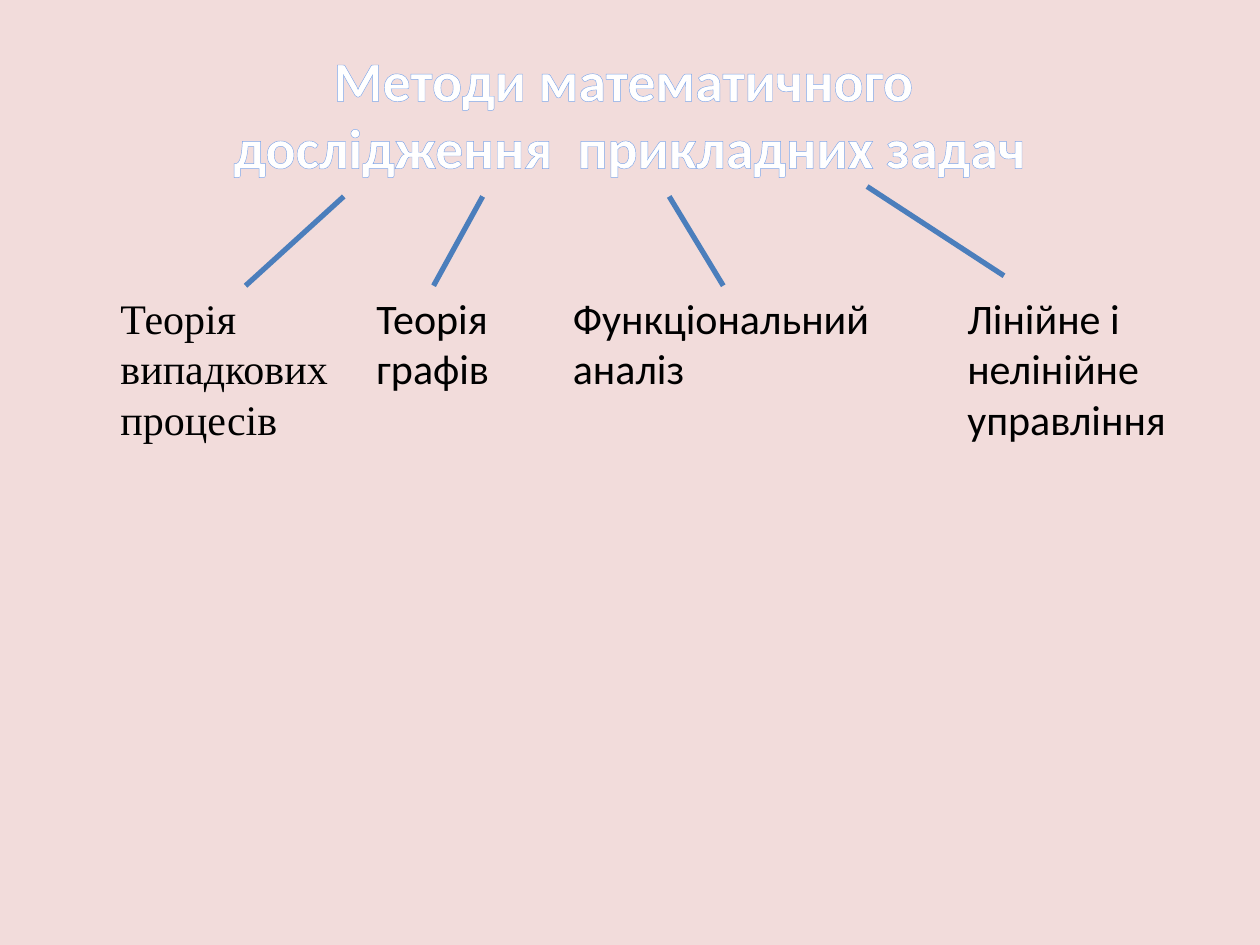
import pptx
import pptx.dml.color
import pptx.enum.shapes
import pptx.enum.text
import pptx.oxml.ns
import pptx.util
from lxml import etree
from pptx.util import Cm

COLOURS = {
    "background": "F2DCDB",
    "title": "FFFFFF",
    "title_outline": "7EA6EA",
    "text": "000000",
    "branch": "4B7EBC",
}
qn = pptx.oxml.ns.qn


def rgb(name):
    return pptx.dml.color.RGBColor.from_string(COLOURS[name])


class MethodsSlide:
    """Holds the style and the current slide."""

    font = "Calibri"
    title_size = 32
    method_size = 24
    outline_width = 2.48
    branch_width = 3

    def __init__(self, deck):
        self.slide = deck.slides.add_slide(deck.slide_layouts[6])
        fill = self.slide.background.fill
        fill.solid()
        fill.fore_color.rgb = rgb("background")

    def text(self, lines, left, top, width, height, size, colour, font=None):
        box = self.slide.shapes.add_textbox(Cm(left), Cm(top), Cm(width), Cm(height))
        frame = box.text_frame
        frame.word_wrap = True
        frame.auto_size = pptx.enum.text.MSO_AUTO_SIZE.SHAPE_TO_FIT_TEXT
        frame.text = "\n".join(lines)
        for paragraph in frame.paragraphs:
            for run in paragraph.runs:
                run.font.name = font or self.font
                run.font.size = pptx.util.Pt(size)
                run.font.color.rgb = rgb(colour)
        return frame

    def title(self, lines, left, top, width, height):
        frame = self.text(lines, left, top, width, height, self.title_size, "title")
        frame.word_wrap = False
        for paragraph in frame.paragraphs:
            paragraph.alignment = pptx.enum.text.PP_ALIGN.CENTER
            for run in paragraph.runs:
                run.font.bold = True
                self.outline(run)

    def outline(self, run):
        line = etree.Element(qn("a:ln"), w=str(pptx.util.Pt(self.outline_width)))
        fill = etree.SubElement(line, qn("a:solidFill"))
        etree.SubElement(fill, qn("a:srgbClr"), val=COLOURS["title_outline"])
        run.font._element.insert(0, line)

    def method(self, lines, left, top, width, height, font=None):
        self.text(lines, left, top, width, height, self.method_size, "text", font)

    def branch(self, start_x, start_y, end_x, end_y):
        connector = self.slide.shapes.add_connector(
            pptx.enum.shapes.MSO_CONNECTOR.STRAIGHT,
            Cm(start_x), Cm(start_y), Cm(end_x), Cm(end_y))
        connector.line.color.rgb = rgb("branch")
        connector.line.width = pptx.util.Pt(self.branch_width)
        etree.SubElement(connector._element.spPr, qn("a:effectLst"))


def main():
    deck = pptx.Presentation()
    deck.slide_width, deck.slide_height = Cm(25.4), Cm(19.05)
    slide = MethodsSlide(deck)

    # Title
    slide.title(["Методи математичного ", "дослідження  прикладних задач"],
                4.37, 0.79, 16.66, 3)

    # Methods, in one row
    row_top = 5.77
    methods = [
        (["Теорія", "випадкових", "процесів"], 2.18, 4.95, 3.33, "Times New Roman"),
        (["Теорія графів"], 7.34, 3.58, 2.31, None),
        (["Функціональний аналіз"], 11.3, 6.55, 2.31, None),
        (["Лінійне і нелінійне управління"], 19.25, 5.56, 3.33, None),
    ]
    for lines, left, width, height, font in methods:
        slide.method(lines, left, row_top, width, height, font)

    # Branches from the title to the methods
    branch_drop = 1.8
    branches = [(6.93, 3.96, 4.95), (9.73, 3.96, 8.74),
                (17.48, 3.76, 20.24), (13.49, 3.96, 14.58)]
    for start_x, start_y, end_x in branches:
        slide.branch(start_x, start_y, end_x, start_y + branch_drop)

    deck.save("out.pptx")


if __name__ == "__main__":
    main()
